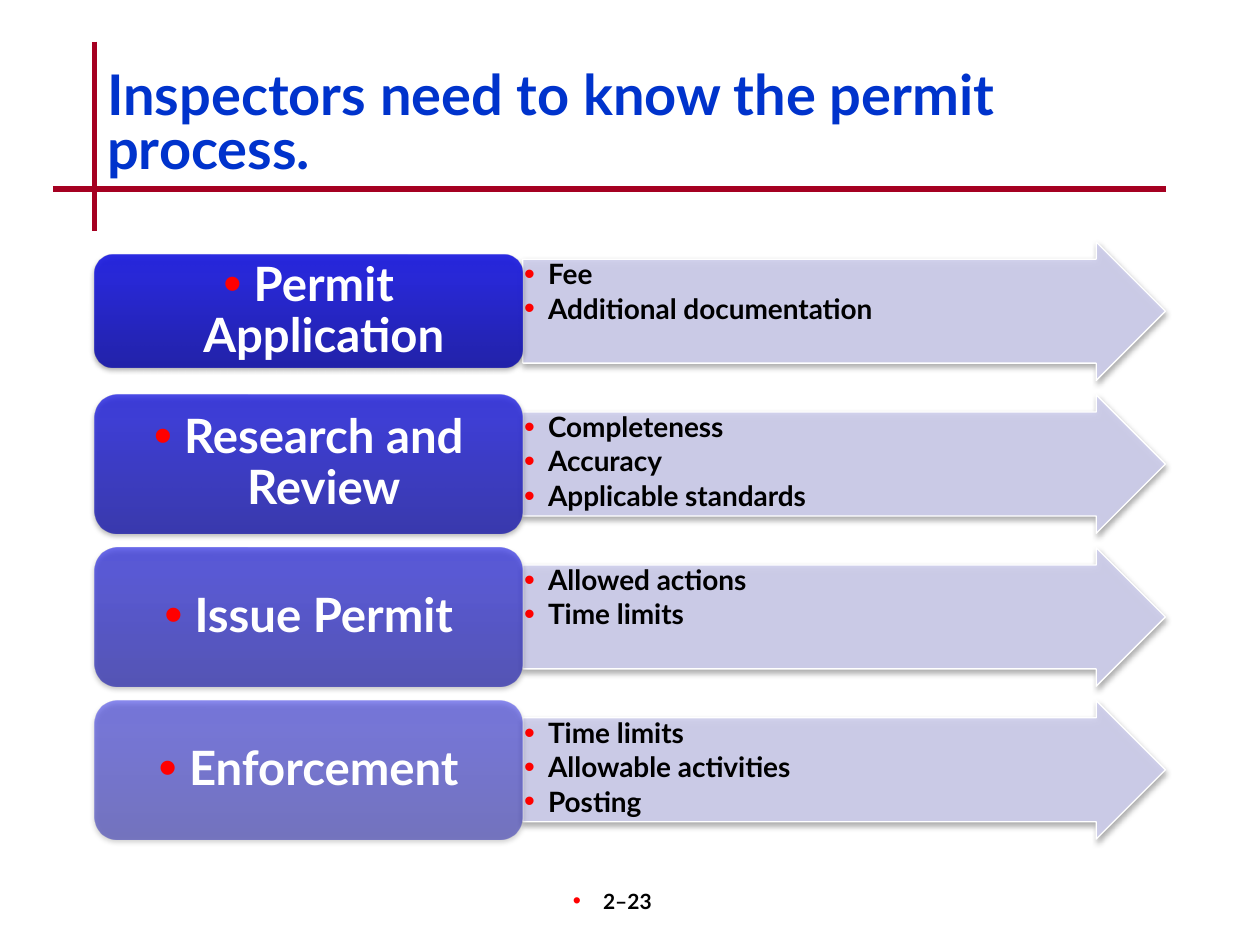
import pptx
import pptx.dml.color
import pptx.enum.shapes
import pptx.enum.text
import pptx.oxml
import pptx.oxml.ns
import pptx.util
from dataclasses import dataclass

# Content
TITLE = "Inspectors need to know the permit process."
PAGE = "2–23"
STEPS = [
    ("Permit Application", ["Fee", "Additional documentation"]),
    ("Research and Review", ["Completeness", "Accuracy", "Applicable standards"]),
    ("Issue Permit", ["Allowed actions", "Time limits"]),
    ("Enforcement", ["Time limits", "Allowable activities", "Posting"]),
]


@dataclass(frozen=True)
class Theme:
    font: str = "Lato"
    title: str = "0033CC"
    rule: str = "A50021"
    bullet: str = "FF0000"
    text: str = "000000"
    light: str = "FFFFFF"
    arrow: str = "CECEEC"
    label: tuple = ((0, "1515A9"), (80, "1B1BDC"), (100, "1818E1"))
    title_pt: int = 32
    label_pt: int = 27
    detail_pt: int = 16
    page_pt: int = 12


T = Theme()
SHAPE = pptx.enum.shapes.MSO_SHAPE
ALIGN = pptx.enum.text.PP_ALIGN
ANCHOR = pptx.enum.text.MSO_ANCHOR
Inches, Pt = pptx.util.Inches, pptx.util.Pt
NS = pptx.oxml.ns.nsdecls("a")

# Grid: a label column and an arrow column, one row per step
LEFT, RIGHT, SPLIT = 0.75, 9.25, 0.4
ARROW_X = LEFT + (RIGHT - LEFT) * SPLIT
TOP, BOTTOM, ROW_H = 1.92, 6.66, 1.1
PITCH = (BOTTOM - TOP - ROW_H) / (len(STEPS) - 1)
FIRST_LABEL_H = 0.89
DETAIL_W, DETAIL_H = 4.69, ROW_H * 0.75
CORNER = 0.05


def rgb(value):
    return pptx.dml.color.RGBColor.from_string(value)


def xml(markup):
    return pptx.oxml.parse_xml(markup.replace(">", f" {NS}>", 1))


def color(value, alpha):
    return f'<a:srgbClr val="{value}"><a:alpha val="{alpha * 1000}"/></a:srgbClr>'


def style(p, size, ink, line=None, after=0, align=ALIGN.LEFT, hang=0):
    """Format a paragraph; a hanging indent brings a bullet."""
    p.alignment = align
    if line:
        p.line_spacing = line
    p.space_before, p.space_after = Pt(0), Pt(round(after, 2))
    if hang:
        pPr = p._p.get_or_add_pPr()
        pPr.set("marL", str(Inches(hang)))
        pPr.set("indent", str(-Inches(hang)))
        pPr.append(xml(f'<a:buClr><a:srgbClr val="{T.bullet}"/></a:buClr>'))
        for tag in ('buSzPct val="110000"', 'buFont typeface="Arial"', 'buChar char="•"'):
            pPr.append(xml(f"<a:{tag}></a:{tag.split()[0]}>"))
    for r in p.runs:
        r.font.name, r.font.size, r.font.bold = T.font, Pt(size), True
        r.font.color.rgb = rgb(ink)


def add_text(s, box, lines, insets, anchor=ANCHOR.TOP, level=0, **fmt):
    tf = s.shapes.add_textbox(*map(Inches, box)).text_frame
    tf.word_wrap, tf.vertical_anchor = True, anchor
    tf.margin_left, tf.margin_top, tf.margin_right, tf.margin_bottom = map(Inches, insets)
    tf.text = "\n".join(lines)
    for p in tf.paragraphs:
        p.level = level
        style(p, **fmt)


def add_block(s, kind, box, fill):
    """Add a shape with the given fill markup and a soft shadow below."""
    sp = s.shapes.add_shape(kind, *map(Inches, box))
    sp.fill.background()
    spPr = sp._element.spPr
    spPr.replace(spPr.find(pptx.oxml.ns.qn("a:noFill")), xml(fill))
    sp.line.fill.background()
    sp.shadow.inherit = False
    spPr.find(pptx.oxml.ns.qn("a:effectLst")).append(xml(
        f'<a:outerShdw blurRad="{Pt(3.1)}" dist="{Pt(1.8)}" dir="5400000" rotWithShape="0">'
        f'{color("000000", 35)}</a:outerShdw>'))
    return sp


def add_rule(s, x1, y1, x2, y2):
    line = s.shapes.add_connector(
        pptx.enum.shapes.MSO_CONNECTOR.STRAIGHT, *map(Inches, (x1, y1, x2, y2)))
    line.line.color.rgb, line.line.width = rgb(T.rule), Pt(3)
    line._element.spPr.append(xml("<a:effectLst></a:effectLst>"))


def add_step(s, i, label, details):
    y = TOP + i * PITCH

    # Arrow and its details
    arrow = add_block(s, SHAPE.RIGHT_ARROW, (ARROW_X, y, RIGHT - ARROW_X, ROW_H),
                      f"<a:solidFill>{color(T.arrow, 90)}</a:solidFill>")
    arrow.adjustments[0], arrow.adjustments[1] = 0.75, 0.5
    arrow.line.color.rgb, arrow.line.width = rgb(T.light), Pt(0.75)
    add_text(s, (ARROW_X, y + (ROW_H - DETAIL_H) / 2, DETAIL_W, DETAIL_H), details,
             [0.01] * 4, level=1, size=T.detail_pt, ink=T.text, line=0.9,
             after=0.15 * T.detail_pt, hang=0.19)

    # Label, fading from row to row
    h = ROW_H if i else FIRST_LABEL_H
    y += (ROW_H - h) / 2
    alpha = round(90 - 40 * i / (len(STEPS) - 1))
    stops = "".join(f'<a:gs pos="{at * 1000}">{color(c, alpha)}</a:gs>' for at, c in T.label)
    add_block(s, SHAPE.ROUNDED_RECTANGLE, (LEFT, y, ARROW_X - LEFT, h),
              f'<a:gradFill rotWithShape="1"><a:gsLst>{stops}</a:gsLst>'
              '<a:lin ang="16200000" scaled="0"/></a:gradFill>')
    add_text(s, (LEFT + CORNER, y + CORNER, ARROW_X - LEFT - 2 * CORNER, h - 2 * CORNER),
             [label], (0.11, 0.06, 0.11, 0.06), ANCHOR.MIDDLE, size=T.label_pt, ink=T.light,
             line=0.9, after=0.35 * T.label_pt, align=ALIGN.CENTER, hang=0.24)


def main():
    prs = pptx.Presentation()
    prs.slide_width, prs.slide_height = Inches(10), Inches(7.5)
    s = prs.slides.add_slide(prs.slide_layouts[5])

    # Crossed rules
    add_rule(s, LEFT, 0.33, LEFT, 1.83)
    add_rule(s, 0.42, 1.5, RIGHT, 1.5)

    # Title
    title = s.shapes.title
    title.left, title.top, title.width, title.height = map(Inches, (LEFT, 0.5, RIGHT - LEFT, 1))
    tf = title.text_frame
    tf.text = TITLE
    tf.auto_size, tf.vertical_anchor = pptx.enum.text.MSO_AUTO_SIZE.NONE, ANCHOR.MIDDLE
    style(tf.paragraphs[0], T.title_pt, T.title, line=0.8)

    # Steps
    for i, (label, details) in enumerate(STEPS):
        add_step(s, i, label, details)

    # Page number
    add_text(s, (3.92, 7, 2.08, 0.5), [PAGE], (0.1, 0.05, 0.3, 0.05),
             size=T.page_pt, ink=T.text, align=ALIGN.CENTER, hang=0.24)

    prs.save("out.pptx")


if __name__ == "__main__":
    main()
